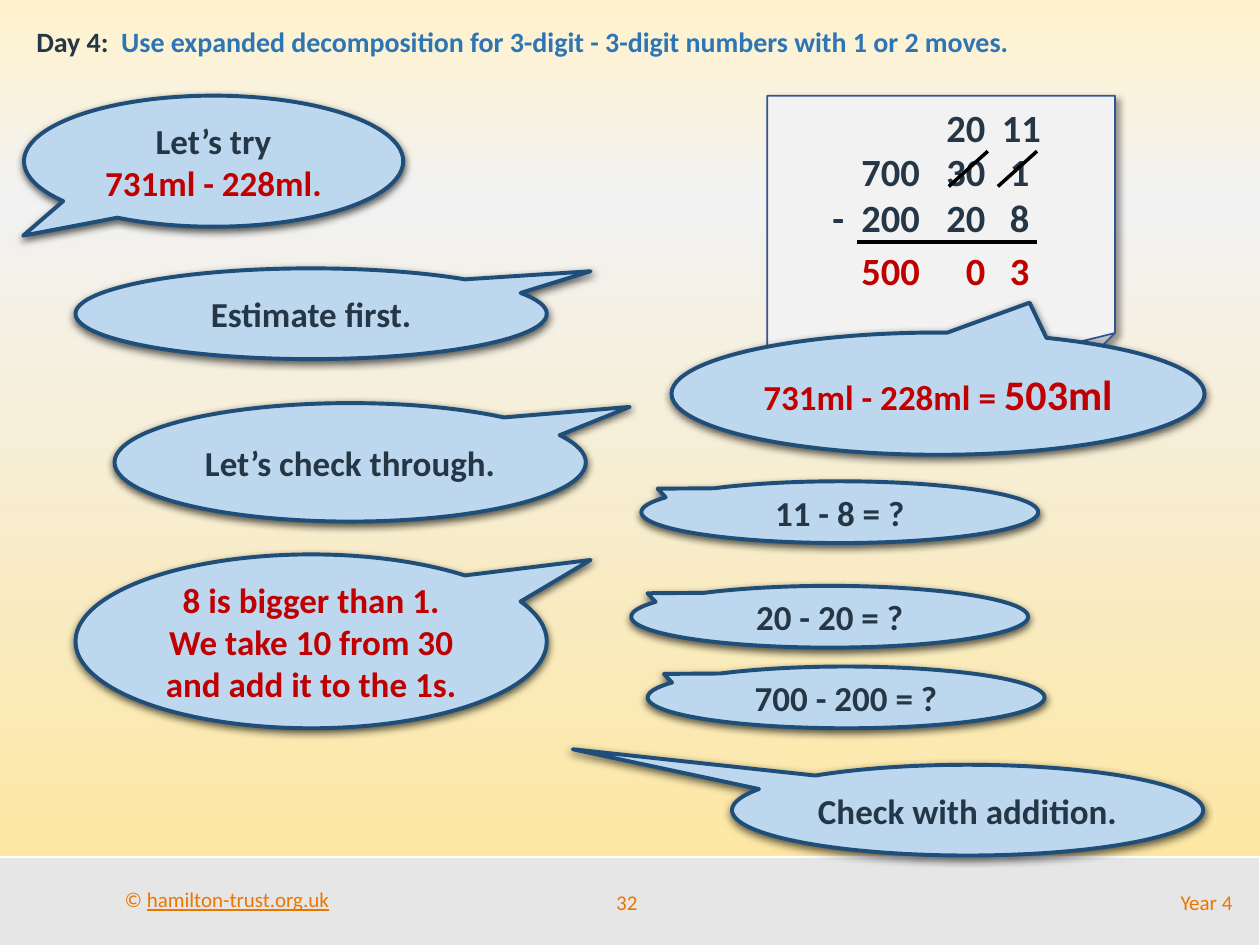
from copy import deepcopy
from dataclasses import dataclass

from lxml.etree import SubElement
from pptx import Presentation
from pptx.dml.color import RGBColor
from pptx.enum.shapes import MSO_CONNECTOR, MSO_SHAPE
from pptx.enum.text import MSO_ANCHOR, PP_ALIGN
from pptx.oxml.ns import qn
from pptx.util import Emu, Inches, Pt


@dataclass(frozen=True)
class Theme:
    font: str = "Calibri"
    ink: str = "253746"
    red: str = "C00000"
    blue: str = "2E75B6"
    orange: str = "EA7600"
    black: str = "000000"
    white: str = "FFFFFF"
    footer: str = "E7E6E6"
    paper: str = "F2F2F2"
    paper_line: str = "325491"
    bubble: str = "BDD7EE"
    bubble_line: str = "1F4E79"
    sky: tuple = ((0, "FFF2CC"), (0.21, "F2F2F2"), (1, "FFE699"))
    small: int = 12
    title: int = 16
    body: int = 20
    digits: int = 22
    answer: int = 24


@dataclass(frozen=True)
class Box:
    col: float
    row: float
    cols: float
    rows: float

    def emu(self) -> list[Emu]:
        return [grid(v) for v in (self.col, self.row, self.cols, self.rows)]


@dataclass(frozen=True)
class Run:
    text: str
    color: str
    size: int
    underline: bool = False


@dataclass(frozen=True)
class Shadow:
    alpha: int
    blur: float
    dist: float
    angle: int


@dataclass(frozen=True)
class Callout:
    box: Box
    tail: tuple[float, float]
    lines: list[list[Run]]


T = Theme()
COLS, ROWS = 100, 75
prs = Presentation()
prs.slide_width, prs.slide_height = Inches(10), Inches(7.5)
s = prs.slides.add_slide(prs.slide_layouts[6])


def grid(units: float) -> Emu:
    return Emu(round(prs.slide_width * units / COLS))


def rgb(color: str) -> RGBColor:
    return RGBColor.from_string(color)


def write(tf, lines: list[list[Run]], align=PP_ALIGN.LEFT, bold: bool = True) -> None:
    for i, runs in enumerate(lines):
        p = tf.add_paragraph() if i else tf.paragraphs[0]
        p.alignment = align
        p.font.name, p.font.bold = T.font, bold
        for run in runs:
            r = p.add_run()
            r.text = run.text
            r.font.size, r.font.color.rgb = Pt(run.size), rgb(run.color)
            if run.underline:
                r.font.underline = True


def text(box: Box, runs: list[Run], align=PP_ALIGN.LEFT, bold: bool = True,
         inset: float = 1) -> None:
    tf = s.shapes.add_textbox(*box.emu()).text_frame
    tf.word_wrap, tf.vertical_anchor = True, MSO_ANCHOR.MIDDLE
    tf.margin_left = tf.margin_right = grid(inset)
    tf.margin_top = tf.margin_bottom = 0
    write(tf, [runs], align, bold)


def shape(kind, box: Box, fill: str, line: str, width: float, shadow: Shadow | None = None):
    sp = s.shapes.add_shape(kind, *box.emu())
    sp.fill.solid()
    sp.fill.fore_color.rgb = rgb(fill)
    sp.line.color.rgb, sp.line.width = rgb(line), Pt(width)
    sp.shadow.inherit = False
    if shadow:
        effects = next(sp.element.iter(qn("a:effectLst")))
        outer = SubElement(effects, qn("a:outerShdw"), blurRad=str(Pt(shadow.blur)),
                           dist=str(Pt(shadow.dist)), dir=str(shadow.angle * 60000),
                           algn="ctr", rotWithShape="0")
        color = SubElement(outer, qn("a:srgbClr"), val=T.black)
        SubElement(color, qn("a:alpha"), val=str(shadow.alpha * 1000))
    return sp


def line(x1: float, y1: float, x2: float, y2: float) -> None:
    c = s.shapes.add_connector(MSO_CONNECTOR.STRAIGHT, *map(grid, (x1, y1, x2, y2)))
    c.line.color.rgb, c.line.width = rgb(T.black), Pt(2)
    SubElement(c.element.spPr, qn("a:effectLst"))


def callout(c: Callout) -> None:
    sp = shape(MSO_SHAPE.OVAL_CALLOUT, c.box, T.bubble, T.bubble_line, 2.25,
               Shadow(63, 4.5, 1.5, 90))
    sp.adjustments[0], sp.adjustments[1] = c.tail
    tf = sp.text_frame
    tf.word_wrap, tf.vertical_anchor = True, MSO_ANCHOR.MIDDLE
    write(tf, c.lines, PP_ALIGN.CENTER)


def ink(words: str) -> list[Run]:
    return [Run(words, T.ink, T.body)]


def red(words: str) -> list[Run]:
    return [Run(words, T.red, T.body)]


def background() -> None:
    fill = s.background.fill
    fill.gradient()
    fill.gradient_angle = 270
    stops = next(s.element.iter(qn("a:gsLst")))
    stops.append(deepcopy(stops[0]))
    for stop, (position, color) in zip(fill.gradient_stops, T.sky):
        stop.position, stop.color.rgb = position, rgb(color)


def footer() -> None:
    shape(MSO_SHAPE.RECTANGLE, Box(-0.6, 68, 100.6, 7.2), T.footer, T.white, 1)
    text(Box(8.9, 69.9, 20, 3),
         [Run("© ", T.orange, T.small), Run("hamilton-trust.org.uk", T.orange, T.small, True)],
         bold=False)
    text(Box(45.8, 69.6, 7.9, 4), [Run("32", T.orange, T.small)], PP_ALIGN.CENTER, False)
    text(Box(65, 69.6, 33.8, 4), [Run("Year 4", T.orange, T.small)], PP_ALIGN.RIGHT, False)


def subtraction() -> None:
    shape(MSO_SHAPE.FOLDED_CORNER, Box(60.9, 7.6, 27.6, 22.6), T.paper, T.paper_line, 1,
          Shadow(40, 4, 3, 45))
    right_edges = (67, 73, 78.2, 81.7)
    sums = (
        (10.1, T.ink, ("", "", "20", "")),
        (13.6, T.ink, ("", "700", "30", "1")),
        (17.2, T.ink, ("-", "200", "20", "8")),
        (21.4, T.red, ("", "500", "0", "3")),
    )
    cells = [(edge, middle, color, digits)
             for middle, color, row in sums
             for edge, digits in zip(right_edges, row) if digits]
    cells.append((82.6, 10.1, T.ink, "11"))
    for edge, middle, color, digits in cells:
        text(Box(edge - 7.5, middle - 2, 7.5, 4), [Run(digits, color, T.digits)],
             PP_ALIGN.RIGHT, inset=0)
    line(68, 19.2, 82.3, 19.2)
    for x in (75.3, 79.2):
        line(x, 14.8, x + 3.1, 12)


UP_RIGHT, UP_LEFT = (0.593, -0.468), (-0.459, -0.381)
CALLOUTS = (
    Callout(Box(9.1, 32, 37.4, 9.4), UP_RIGHT, [ink("Let’s check through.")]),
    Callout(Box(6, 44, 37.4, 13.8), UP_RIGHT,
            [red("8 is bigger than 1."), red("We take 10 from 30 and add it to the 1s.")]),
    Callout(Box(50.9, 38.2, 31.5, 4.9), UP_LEFT, [ink("11 - 8 = ?")]),
    Callout(Box(53.3, 26.4, 42.3, 9.7), (0.172, -0.745),
            [red("731ml - 228ml = ") + [Run("503ml", T.red, T.answer)]]),
    Callout(Box(50.1, 46.5, 31.5, 4.9), UP_LEFT, [ink("20 - 20 = ?")]),
    Callout(Box(51.4, 52.9, 31.5, 4.9), UP_LEFT, [ink("700 - 200 = ?")]),
    Callout(Box(1.9, 7.6, 30.1, 10.4), (-0.502, 0.568),
            [ink("Let’s try"), red("731ml - 228ml.")]),
    Callout(Box(6, 21.3, 37.4, 7.2), UP_RIGHT, [ink("Estimate first.")]),
    Callout(Box(58.1, 60.7, 37.4, 7.2), (-0.838, -0.672), [ink("Check with addition.")]),
)

background()
footer()
subtraction()
for item in CALLOUTS:
    callout(item)
text(Box(1.9, 1.4, 95.4, 3.7), [
    Run("Day 4:  ", T.ink, T.title),
    Run("Use expanded decomposition for 3-digit - 3-digit numbers with 1 or 2 moves.",
        T.blue, T.title),
])
prs.save("out.pptx")
